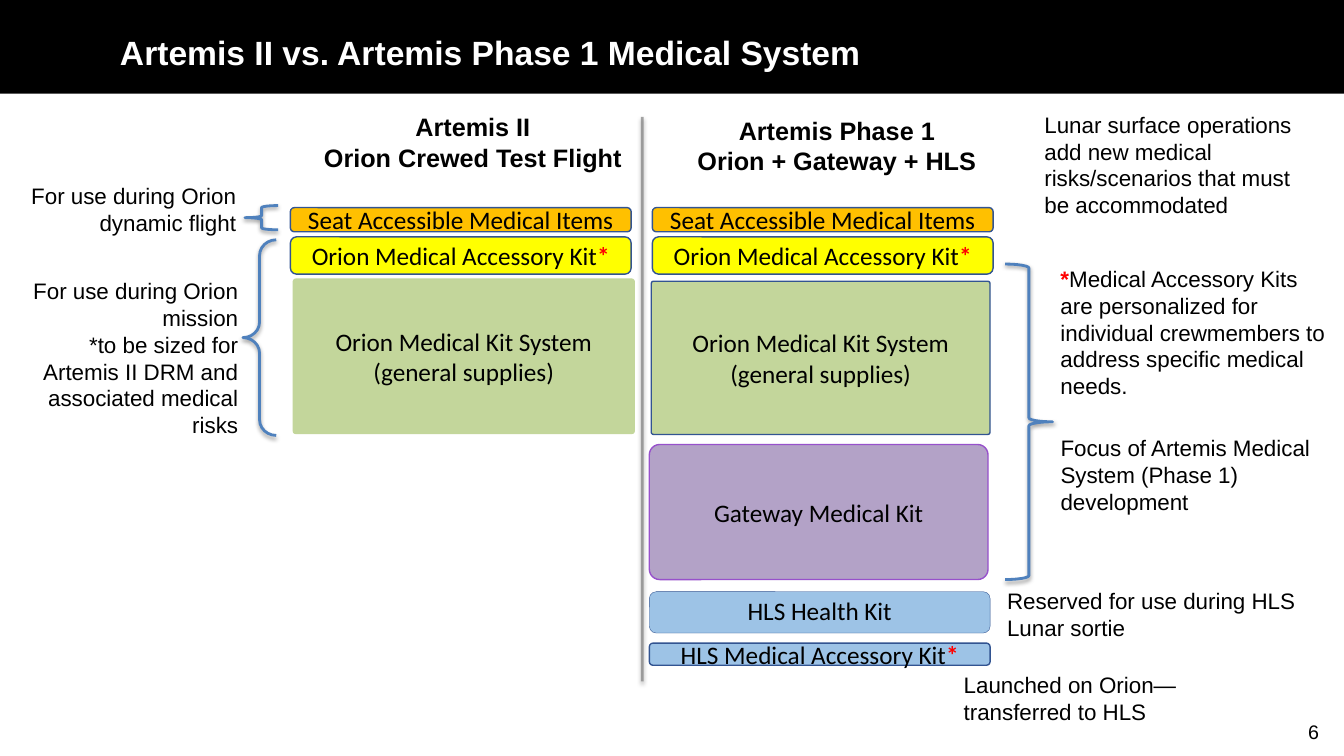
from dataclasses import dataclass

from lxml import etree
from pptx import Presentation
from pptx.dml.color import RGBColor
from pptx.enum import shapes, text
from pptx.oxml import ns
from pptx.util import Inches, Pt

SHAPE = shapes.MSO_SHAPE
ALIGN = text.PP_ALIGN
ANCHOR = text.MSO_ANCHOR


@dataclass(frozen=True)
class Theme:
    black: str = "000000"
    white: str = "FFFFFF"
    red: str = "FF0000"
    orange: str = "FFC000"
    yellow: str = "FFFF00"
    green: str = "C3D69B"
    purple: str = "B3A2C7"
    purple_edge: str = "9751CB"
    sky: str = "9DC3E6"
    edge: str = "325491"
    brace: str = "4F81BD"
    divider: str = "808080"
    head_font: str = "Arial"
    kit_font: str = "Calibri"
    title: int = 24
    label: int = 18
    note: int = 16
    number: int = 14


T = Theme()
ACCESSORY = ("Orion Medical Accessory Kit", "*")
KIT_SYSTEM = "Orion Medical Kit System"
SUPPLIES = "(general supplies)"


def rgb(value):
    return RGBColor.from_string(value)


def box(x, y, w, h):
    return Inches(x), Inches(y), Inches(w), Inches(h)


def write(tf, lines, size, font=T.head_font, color=T.black, bold=False, align=ALIGN.LEFT):
    """Each line is a string or a tuple of runs; a run of just "*" is a red mark."""
    for i, line in enumerate(lines):
        p = tf.add_paragraph() if i else tf.paragraphs[0]
        p.alignment = align
        for part in (line,) if isinstance(line, str) else line:
            r = p.add_run()
            r.text = part
            r.font.name, r.font.size = font, Pt(size)
            r.font.bold = bold or part == "*"
            r.font.color.rgb = rgb(T.red if part == "*" else color)


def add_text(s, place, lines, size=T.note, wrap=True, **style):
    tf = s.shapes.add_textbox(*box(*place)).text_frame
    tf.word_wrap = wrap
    write(tf, lines, size, **style)


def add_shadow(sp):
    effects = etree.SubElement(sp.element.spPr, ns.qn("a:effectLst"))
    shadow = etree.SubElement(effects, ns.qn("a:outerShdw"), blurRad=str(Pt(3.1)),
                              dist=str(Pt(1.6)), dir="5400000", rotWithShape="0")
    color = etree.SubElement(shadow, ns.qn("a:srgbClr"), val=T.black)
    etree.SubElement(color, ns.qn("a:alpha"), val="38000")


def add_kit(s, place, lines, fill, edge=T.edge, width=1, adj=None, anchor=ANCHOR.MIDDLE):
    sp = s.shapes.add_shape(SHAPE.ROUNDED_RECTANGLE, *box(*place))
    sp.shadow.inherit = False
    if adj is not None:
        sp.adjustments[0] = adj
    sp.fill.solid()
    sp.fill.fore_color.rgb = rgb(fill)
    sp.line.color.rgb = rgb(edge)
    sp.line.width = Pt(width)
    sp.text_frame.vertical_anchor = anchor
    write(sp.text_frame, lines, T.label, font=T.kit_font, align=ALIGN.CENTER)


def add_brace(s, kind, place, adj=None):
    sp = s.shapes.add_shape(kind, *box(*place))
    if adj is not None:
        sp.adjustments[0] = adj
    sp.fill.background()
    sp.line.color.rgb = rgb(T.brace)
    sp.line.width = Pt(2)
    add_shadow(sp)


def title_band(s, x, y, w, h):
    band = s.shapes.add_shape(SHAPE.RECTANGLE, *box(x, y, w, h))
    band.shadow.inherit = False
    band.fill.solid()
    band.fill.fore_color.rgb = rgb(T.black)
    band.line.fill.background()
    title = s.shapes.title
    title.element.addprevious(band.element)  # the band lies behind the title
    title.left, title.top, title.width, title.height = box(x + 1.09, y + 0.11, 11.03, 0.81)
    title.text_frame.vertical_anchor = ANCHOR.MIDDLE
    write(title.text_frame, ["Artemis II vs. Artemis Phase 1 Medical System"],
          T.title, color=T.white, bold=True)


def divider(s, x, y, h):
    line = s.shapes.add_connector(shapes.MSO_CONNECTOR.STRAIGHT, Inches(x), Inches(y),
                                  Inches(x), Inches(y + h))
    line.line.color.rgb = rgb(T.divider)
    line.line.width = Pt(2)
    color = line.element.spPr.find(".//" + ns.qn("a:srgbClr"))
    etree.SubElement(color, ns.qn("a:alpha"), val="70000")
    add_shadow(line)


def shared_kits(s, x, y, w):
    """Seat items above the accessory kit, carried on both missions."""
    add_kit(s, (x, y, w, 0.24), ["Seat Accessible Medical Items"], T.orange)
    add_kit(s, (x, y + 0.29, w, 0.37), [ACCESSORY], T.yellow)


def artemis_2(s, x, y, w):
    add_text(s, (x + 0.22, y, 3.18, 0.71), ["Artemis II", "Orion Crewed Test Flight"],
             T.label, wrap=False, bold=True, align=ALIGN.CENTER)
    shared_kits(s, x, y + 1, w)
    add_kit(s, (x + 0.03, y + 1.71, w, 1.53), [KIT_SYSTEM, SUPPLIES],
            T.green, edge=T.green, adj=0.015)


def artemis_phase_1(s, x, y, w):
    add_text(s, (x + 0.22, y + 0.03, 3.28, 0.71), ["Artemis Phase 1", "Orion + Gateway + HLS"],
             T.label, bold=True, align=ALIGN.CENTER)
    shared_kits(s, x + 0.03, y + 1, w)
    add_kit(s, (x + 0.02, y + 1.73, w - 0.02, 1.52), [KIT_SYSTEM, SUPPLIES],
            T.green, adj=0.015)
    add_kit(s, (x, y + 3.35, w - 0.02, 1.34), ["Gateway Medical Kit"],
            T.purple, edge=T.purple_edge, adj=0.077)
    add_kit(s, (x, y + 4.81, w, 0.41), ["HLS Health Kit"],
            T.sky, width=0.25, anchor=ANCHOR.BOTTOM)
    add_kit(s, (x, y + 5.32, w, 0.22), [("HLS Medical Accessory Kit", "*")], T.sky)


def left_notes(s, x, y, w):
    add_text(s, (x, y, w, 0.64), ["For use during Orion dynamic flight"], align=ALIGN.RIGHT)
    add_text(s, (x + 0.02, y + 0.94, w, 1.72),
             ["For use during Orion mission",
              "*to be sized for Artemis II DRM and associated medical risks"],
             align=ALIGN.RIGHT)
    add_brace(s, SHAPE.LEFT_BRACE, (x + 2.41, y + 0.28, 0.33, 0.24))
    add_brace(s, SHAPE.LEFT_BRACE, (x + 2.39, y + 0.62, 0.33, 1.94), adj=0.471)


def right_notes(s, x, y):
    add_brace(s, SHAPE.RIGHT_BRACE, (x + 0.51, y + 1.57, 0.47, 3.13))
    notes = [
        (0.8, 0, 2.84, 1.18, "Lunar surface operations add new medical risks/scenarios "
                             "that must be accommodated"),
        (0.96, 1.53, 2.84, 1.45, ("*", "Medical Accessory Kits are personalized for individual "
                                       "crewmembers to address specific medical needs.")),
        (0.96, 3.21, 2.72, 0.91, "Focus of Artemis Medical System (Phase 1) development"),
        (0.43, 4.73, 3.26, 0.64, "Reserved for use during HLS Lunar sortie"),
        (0, 5.56, 3.3, 0.64, "Launched on Orion—transferred to HLS"),
    ]
    for dx, dy, w, h, note in notes:
        add_text(s, (x + dx, y + dy, w, h), [note])


def main():
    prs = Presentation()
    prs.slide_width, prs.slide_height = Inches(13.33), Inches(7.5)
    s = prs.slides.add_slide(prs.slide_layouts[5])

    # Header and page number
    title_band(s, 0, 0, 13.33, 0.93)
    add_text(s, (11.73, 7.09, 1.45, 0.34), ["6"], T.number, align=ALIGN.RIGHT)

    # Mission columns
    divider(s, 6.37, 1.16, 5.6)
    artemis_2(s, 2.88, 1.06, 3.38)
    artemis_phase_1(s, 6.44, 1.06, 3.38)

    # Notes beside the columns
    left_notes(s, 0.02, 1.76, 2.42)
    right_notes(s, 9.46, 1.05)

    prs.save("out.pptx")


if __name__ == "__main__":
    main()
